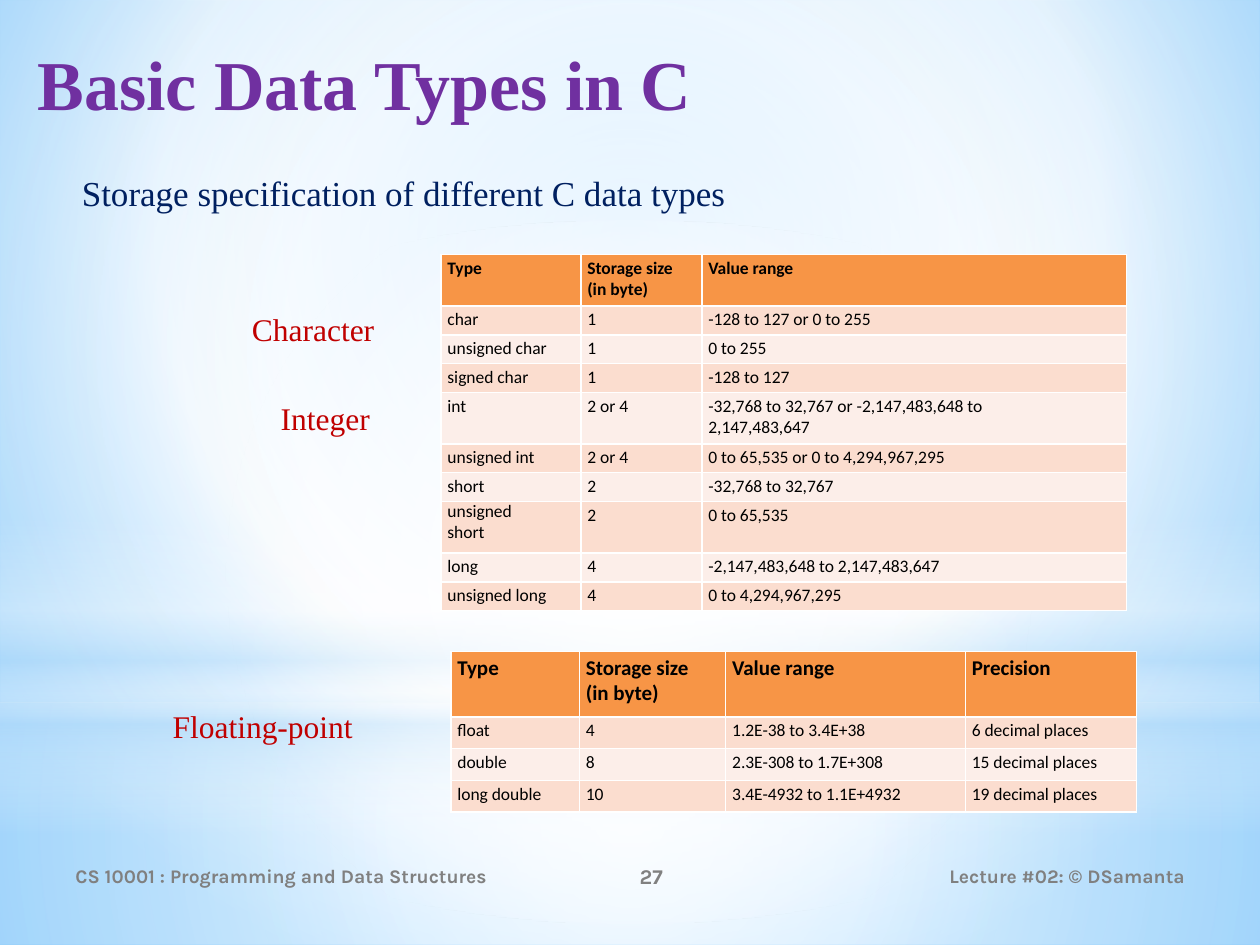
import pptx
import pptx.dml.color
import pptx.enum.shapes
import pptx.enum.text
import pptx.oxml
import pptx.oxml.ns
import pptx.util
from dataclasses import dataclass

Cm, Pt = pptx.util.Cm, pptx.util.Pt
SHAPE = pptx.enum.shapes.MSO_SHAPE
ALIGN = pptx.enum.text.PP_ALIGN
ANCHOR = pptx.enum.text.MSO_ANCHOR
qn = pptx.oxml.ns.qn
NS = pptx.oxml.ns.nsdecls("a")


@dataclass(frozen=True)
class Theme:
    serif: str = "Times New Roman"
    sans: str = "Calibri"
    footer_font: str = "Karla"
    title: str = "7030A0"
    body: str = "002060"
    label: str = "C00000"
    footer: str = "808080"
    ink: str = "000000"
    white: str = "FFFFFF"
    haze: str = "B4DCFA"
    header: str = "F79546"
    bands: tuple = ("FBDDCF", "FCEEE9")
    title_size: float = 40
    body_size: float = 20
    label_size: float = 18
    footer_size: float = 11
    number_size: float = 12
    cell_size: float = 10
    indent: float = 0.13


def rgb(value):
    return pptx.dml.color.RGBColor.from_string(value)


def write(tf, text, *, font, size, color, bold=False, align=None, indent=0,
          before=0, after=0, spacing=None, next_spacing=None):
    """Write one paragraph per line; later lines may have their own spacing."""
    for i, line in enumerate(text.split("\n")):
        p = tf.add_paragraph() if i else tf.paragraphs[0]
        p.alignment = align
        p.space_before = Pt(0 if i else before)
        p.space_after = Pt(after)
        p.line_spacing = next_spacing if i else spacing
        if indent:
            pPr = p._p.get_or_add_pPr()
            pPr.set("marL", str(Cm(indent)))
            pPr.set("indent", "0")
        r = p.add_run()
        r.text = line
        r.font.name, r.font.size, r.font.bold = font, Pt(size), bold
        r.font.color.rgb = rgb(color)


def paint_gradient(parent, stops, center=None, angle=90):
    """Put a gradient in place of the empty fill of a shape or background."""
    gs = "".join(
        f'<a:gs pos="{pos * 1000}"><a:srgbClr val="{color}">'
        f'<a:alpha val="{alpha * 1000}"/></a:srgbClr></a:gs>'
        for pos, color, alpha in stops)
    if center:
        l, t, r, b = (v * 1000 for v in center)
        way = (f'<a:path path="circle"><a:fillToRect l="{l}" t="{t}" '
               f'r="{r}" b="{b}"/></a:path>')
    else:
        way = f'<a:lin ang="{angle * 60000}" scaled="0"/>'
    fill = pptx.oxml.parse_xml(
        f'<a:gradFill {NS} rotWithShape="1"><a:gsLst>{gs}</a:gsLst>{way}</a:gradFill>')
    parent.replace(parent.find(qn("a:noFill")), fill)


class Deck:
    def __init__(self, theme):
        self.theme = theme
        self.prs = pptx.Presentation()
        self.prs.slide_width, self.prs.slide_height = Cm(25.4), Cm(19.05)
        self.s = self.prs.slides.add_slide(self.prs.slide_layouts[6])

    def background(self, stops, center):
        self.s.background.fill.background()
        paint_gradient(self.s.element.find(".//" + qn("p:bgPr")), stops, center)

    def glow(self, kind, top, height, stops, center=None):
        sp = self.s.shapes.add_shape(kind, 0, Cm(top), self.prs.slide_width, Cm(height))
        sp.shadow.inherit = False
        sp.fill.background()
        sp.line.fill.background()
        paint_gradient(sp._element.spPr, stops, center)

    def text(self, box, text, anchor=ANCHOR.TOP, inset_top=0.13, **fmt):
        tf = self.s.shapes.add_textbox(*map(Cm, box)).text_frame
        tf.word_wrap = True
        tf.vertical_anchor = anchor
        tf.margin_top = Cm(inset_top)
        write(tf, text, **fmt)

    def label(self, left, top, width, text):
        t = self.theme
        self.text((left, top, width, 1.02), text, font=t.serif, size=t.label_size,
                  color=t.label, indent=t.indent)

    def footer(self, left, width, text, size, align):
        t = self.theme
        self.text((left, 17.15, width, 1.02), text, anchor=ANCHOR.MIDDLE,
                  font=t.footer_font, size=size, color=t.footer, bold=True, align=align)

    def borders(self, cell, top, bottom):
        tcPr = cell._tc.get_or_add_tcPr()
        for side, width in (("L", 1), ("R", 1), ("T", top), ("B", bottom)):
            tcPr.append(pptx.oxml.parse_xml(
                f'<a:ln{side} {NS} w="{Pt(width)}"><a:solidFill>'
                f'<a:srgbClr val="{self.theme.white}"/></a:solidFill></a:ln{side}>'))

    def table(self, left, top, cols, rows, heights, head_size, drop, head_drop, narrow=()):
        """Tall rows hold two lines; their one-line cells are dropped to the middle."""
        t = self.theme
        tbl = self.s.shapes.add_table(len(rows), len(cols), Cm(left), Cm(top),
                                      Cm(sum(cols)), Cm(sum(heights))).table
        tbl.horz_banding = False
        for col, width in zip(tbl.columns, cols):
            col.width = Cm(width)
        for i, values in enumerate(rows):
            tbl.rows[i].height = Cm(heights[i])
            head = i == 0
            size = head_size if head else t.cell_size
            tall = any("\n" in v or v in narrow for v in values)
            for j, value in enumerate(values):
                cell = tbl.cell(i, j)
                cell.margin_left = cell.margin_right = 0
                cell.margin_top = cell.margin_bottom = 0
                self.borders(cell, 1.5 if i == 1 else 1, 1.5 if head else 1)
                cell.fill.solid()
                cell.fill.fore_color.rgb = rgb(t.header if head else t.bands[(i - 1) % 2])
                two_lines = "\n" in value or value in narrow
                if value in narrow:
                    cell.margin_right = Cm(0.8)
                before = 0.9 if i == 1 else 1.4
                if tall and not two_lines:
                    before = head_drop if head else drop
                write(cell.text_frame, value, font=t.sans, size=size, color=t.ink,
                      bold=head, indent=t.indent, before=before,
                      spacing=Pt(12) if value in narrow else 1.15,
                      next_spacing=Pt(size * 1.2))


def main():
    t = Theme()
    d = Deck(t)

    # Sky background
    middle = (50, 50, 50, 50)
    d.background([(0, "9ED5FF", 100), (60, t.white, 100), (100, "5BB9FF", 100)],
                 (20, 10, 20, 60))
    d.glow(SHAPE.RECTANGLE, 14.17, 4.88,
           [(0, t.white, 91), (37, t.white, 76), (100, t.haze, 79)], middle)
    d.glow(SHAPE.RECTANGLE, 0, 14.17,
           [(0, t.white, 89), (48, t.white, 62), (100, t.haze, 79)], middle)
    d.glow(SHAPE.RECTANGLE, 10.46, 6.35,
           [(0, t.white, 0), (29, t.white, 30), (45, t.haze, 40),
            (55, t.white, 26), (65, t.haze, 60), (100, t.white, 0)])
    d.glow(SHAPE.OVAL, 4.45, 14.17, [(0, t.white, 100), (56, t.white, 0)], middle)

    # Title and lead sentence
    d.text((0.51, 0.53, 24.21, 3.18), "Basic Data Types in C", inset_top=0.28,
           font=t.serif, size=t.title_size, color=t.title, bold=True)
    d.text((1.27, 3.33, 23.24, 13.21), "Storage specification of different C data types",
           font=t.serif, size=t.body_size, color=t.body, indent=t.indent, before=2, after=3)

    # Footer
    d.footer(1.27, 9.32, "CS 10001 : Programming and Data Structures", t.footer_size, ALIGN.LEFT)
    d.footer(10.59, 5.08, "27", t.number_size, ALIGN.CENTER)
    d.footer(17.15, 6.99, "Lecture #02: © DSamanta", t.footer_size, ALIGN.RIGHT)

    # Character and integer types
    integers = [
        ("Type", "Storage size\n(in byte)", "Value range"),
        ("char", "1", "-128 to 127 or 0 to 255"),
        ("unsigned char", "1", "0 to 255"),
        ("signed char", "1", "-128 to 127"),
        ("int", "2 or 4", "-32,768 to 32,767 or -2,147,483,648 to\n2,147,483,647"),
        ("unsigned int", "2 or 4", "0 to 65,535 or 0 to 4,294,967,295"),
        ("short", "2", "-32,768 to 32,767"),
        ("unsigned short", "2", "0 to 65,535"),
        ("long", "4", "-2,147,483,648 to 2,147,483,647"),
        ("unsigned long", "4", "0 to 4,294,967,295"),
    ]
    d.table(8.89, 5.13, (2.82, 2.44, 8.56), integers,
            [1.04 if i in (0, 4, 7) else 0.58 for i in range(len(integers))],
            head_size=10, drop=7.5, head_drop=7.5, narrow=("unsigned short",))

    # Floating-point types
    floats = [
        ("Type", "Storage size\n(in byte)", "Value range", "Precision"),
        ("float", "4", "1.2E-38 to 3.4E+38", "6 decimal places"),
        ("double", "8", "2.3E-308 to 1.7E+308", "15 decimal places"),
        ("long double", "10", "3.4E-4932 to 1.1E+4932", "19 decimal places"),
    ]
    d.table(9.09, 13.13, (2.59, 2.95, 4.83, 3.45), floats, [1.32] + [0.64] * 3,
            head_size=12, drop=7.5, head_drop=8.7)

    # Group labels
    d.label(4.7, 6.12, 3.76, "Character")
    d.label(3.1, 14.12, 4.39, "Floating-point")
    d.label(5.28, 7.92, 3.76, "Integer")

    d.prs.save("out.pptx")


if __name__ == "__main__":
    main()
